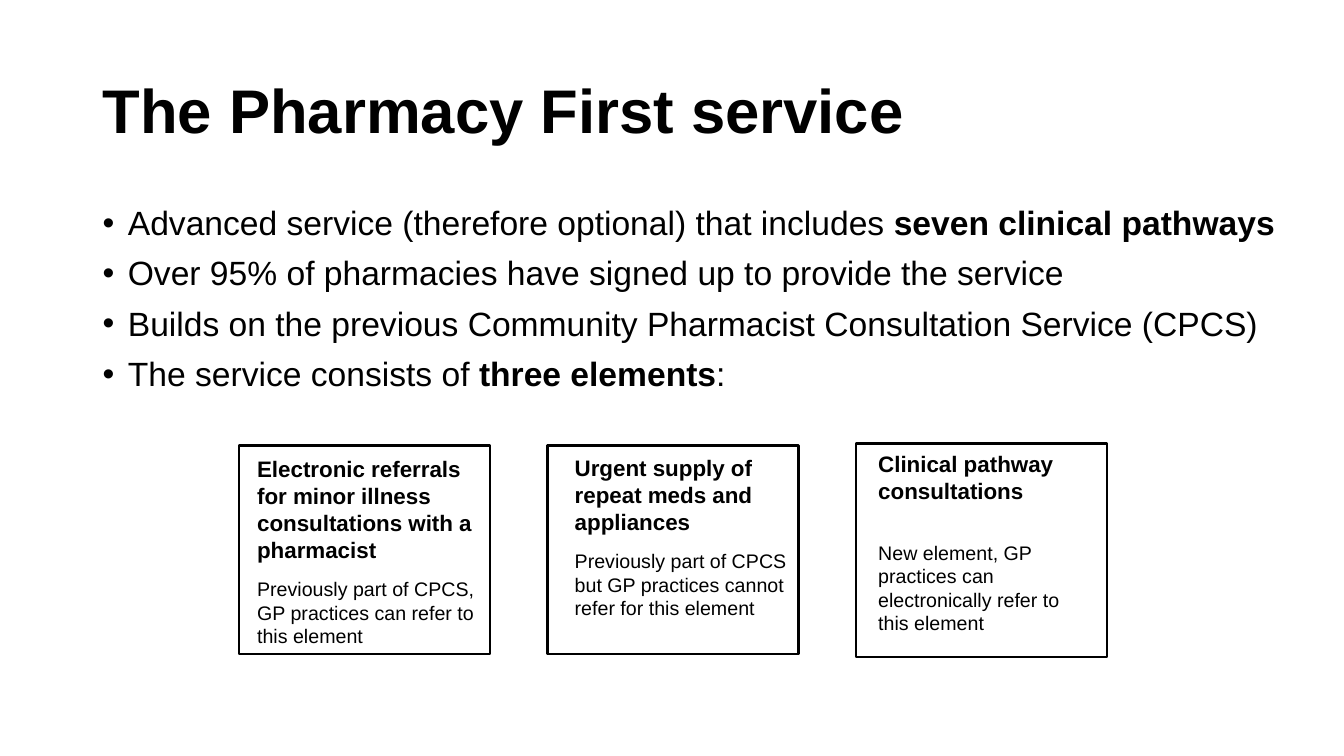
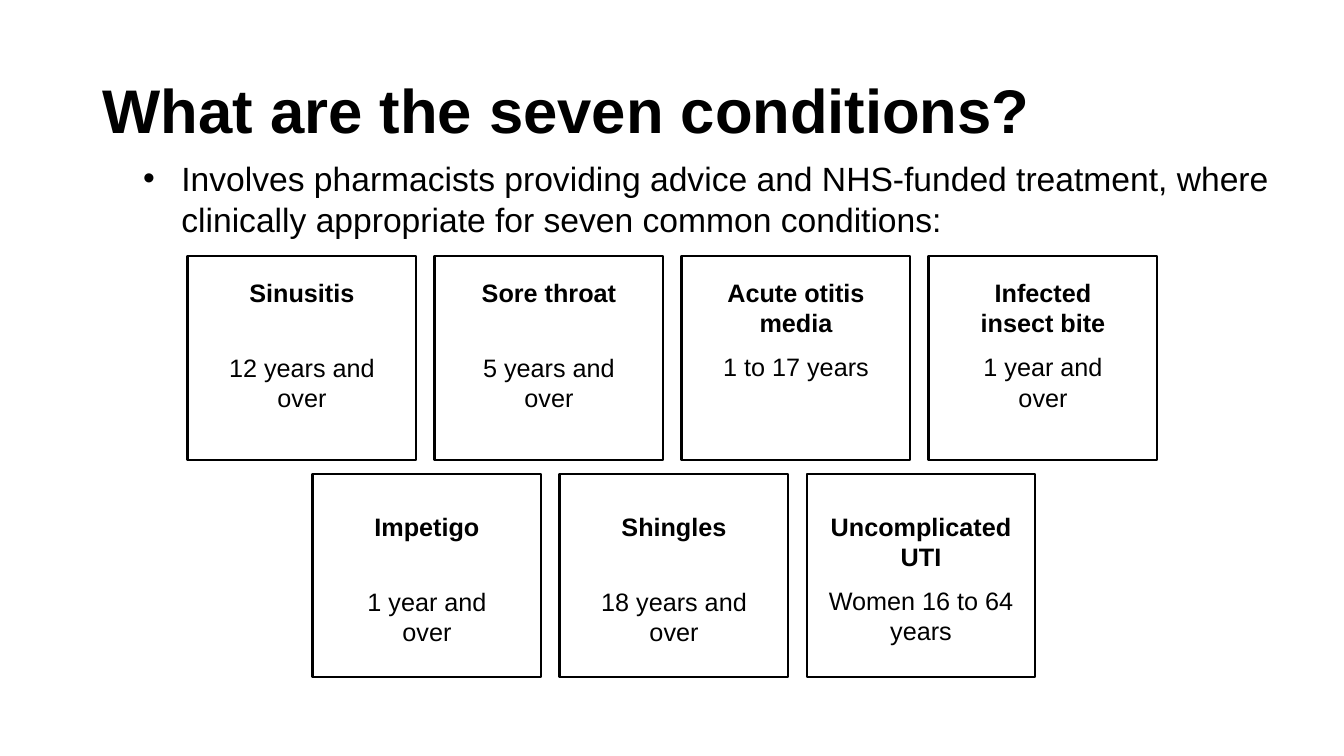
"""Build two slides on the Pharmacy First service."""
from lxml.etree import SubElement
from pptx import Presentation
from pptx.dml.color import RGBColor
from pptx.enum.shapes import MSO_SHAPE
from pptx.enum.text import MSO_ANCHOR, PP_ALIGN
from pptx.oxml.ns import qn
from pptx.util import Pt

PX = 9144
BLACK = RGBColor(0, 0, 0)
WHITE = RGBColor(255, 255, 255)
FONT = "Arial"


def add_text(tf, text, size, bold=False, align=PP_ALIGN.LEFT, before=0, spacing=1.0, indent=0):
    """Append a paragraph; text between asterisks is bold, an indent brings a bullet."""
    p = tf.add_paragraph() if tf.paragraphs[0].runs else tf.paragraphs[0]
    p.alignment = align
    p.space_before = Pt(before)
    p.line_spacing = spacing
    for i, part in enumerate(text.split("*")):
        if part:
            r = p.add_run()
            r.text = part
            r.font.name = FONT
            r.font.size = Pt(size)
            r.font.bold = bold or i % 2 == 1
            r.font.color.rgb = BLACK
    if indent:
        pPr = p._p.get_or_add_pPr()
        pPr.set("marL", str(indent * PX))
        pPr.set("indent", str(-indent * PX))
        SubElement(pPr, qn("a:buFont"), typeface=FONT)
        SubElement(pPr, qn("a:buChar"), char="•")


def add_frame(s, x, y, w, h, margins=None):
    """Return the text frame of a text box, or of an outlined card if margins are given."""
    box = [v * PX for v in (x, y, w, h)]
    if margins is None:
        tf = s.shapes.add_textbox(*box).text_frame
    else:
        sp = s.shapes.add_shape(MSO_SHAPE.RECTANGLE, *box)
        sp.shadow.inherit = False
        sp.fill.solid()
        sp.fill.fore_color.rgb = WHITE
        sp.line.color.rgb = BLACK
        sp.line.width = Pt(1.5)
        tf = sp.text_frame
        tf.margin_left, tf.margin_top, tf.margin_right = [m * PX for m in margins]
        tf.margin_bottom = 0
    tf.vertical_anchor = MSO_ANCHOR.TOP
    tf.word_wrap = True
    return tf


prs = Presentation()
prs.slide_width = 1333 * PX
prs.slide_height = 750 * PX

slides = []
for title in ("The Pharmacy First service", "What are the seven conditions?"):
    s = prs.slides.add_slide(prs.slide_layouts[6])
    tf = add_frame(s, 92, 40, 1150, 145)
    tf.vertical_anchor = MSO_ANCHOR.MIDDLE
    add_text(tf, title, 44, bold=True, spacing=0.9)
    slides.append(s)
service, conditions = slides

BULLETS = [
    "Advanced service (therefore optional) that includes *seven clinical pathways*",
    "Over 95% of pharmacies have signed up to provide the service",
    "Builds on the previous Community Pharmacist Consultation Service (CPCS)",
    "The service consists of *three elements*:",
]
tf = add_frame(service, 92, 200, 1186, 240)
for text in BULLETS:
    add_text(tf, text, 24, before=10, spacing=0.9, indent=25)

ELEMENTS = [
    ("Electronic referrals for minor illness consultations with a pharmacist",
     "Previously part of CPCS, GP practices can refer to this element",
     442, 207, (18, 10, 3), 10),
    ("Urgent supply of repeat meds and appliances",
     "Previously part of CPCS but GP practices cannot refer for this element",
     442, 207, (27, 9, 8), 10),
    ("Clinical pathway consultations",
     "New element, GP practices can electronically refer to this element",
     440, 212, (22, 7, 13), 26),
]
for i, (heading, detail, y, h, margins, gap) in enumerate(ELEMENTS):
    tf = add_frame(service, 237 + i * 306, y, 249, h, margins)
    add_text(tf, heading, 16, bold=True)
    add_text(tf, detail, 14, before=gap)

tf = add_frame(conditions, 132, 152, 1158, 91)
add_text(tf, "Involves pharmacists providing advice and NHS-funded treatment, where "
             "clinically appropriate for seven common conditions:", 24, indent=38)

ROWS = [
    (186, 254, 21, [
        ("Sinusitis", "12 years and over", 27, 32),
        ("Sore throat", "5 years and over", 27, 32),
        ("Acute otitis media", "1 to 17 years", 27, 10),
        ("Infected insect bite", "1 year and over", 27, 10),
    ]),
    (310, 470, 37, [
        ("Impetigo", "1 year and over", 27, 32),
        ("Shingles", "18 years and over", 27, 32),
        ("Uncomplicated UTI", "Women 16 to 64 years", 19, 10),
    ]),
]
for left, top, inset, cards in ROWS:
    for i, (name, ages, side, gap) in enumerate(cards):
        tf = add_frame(conditions, left + i * 245, top, 227, 202, (side, inset, side))
        add_text(tf, name, 18, bold=True, align=PP_ALIGN.CENTER)
        add_text(tf, ages, 18, align=PP_ALIGN.CENTER, before=gap)

prs.save("out.pptx")
